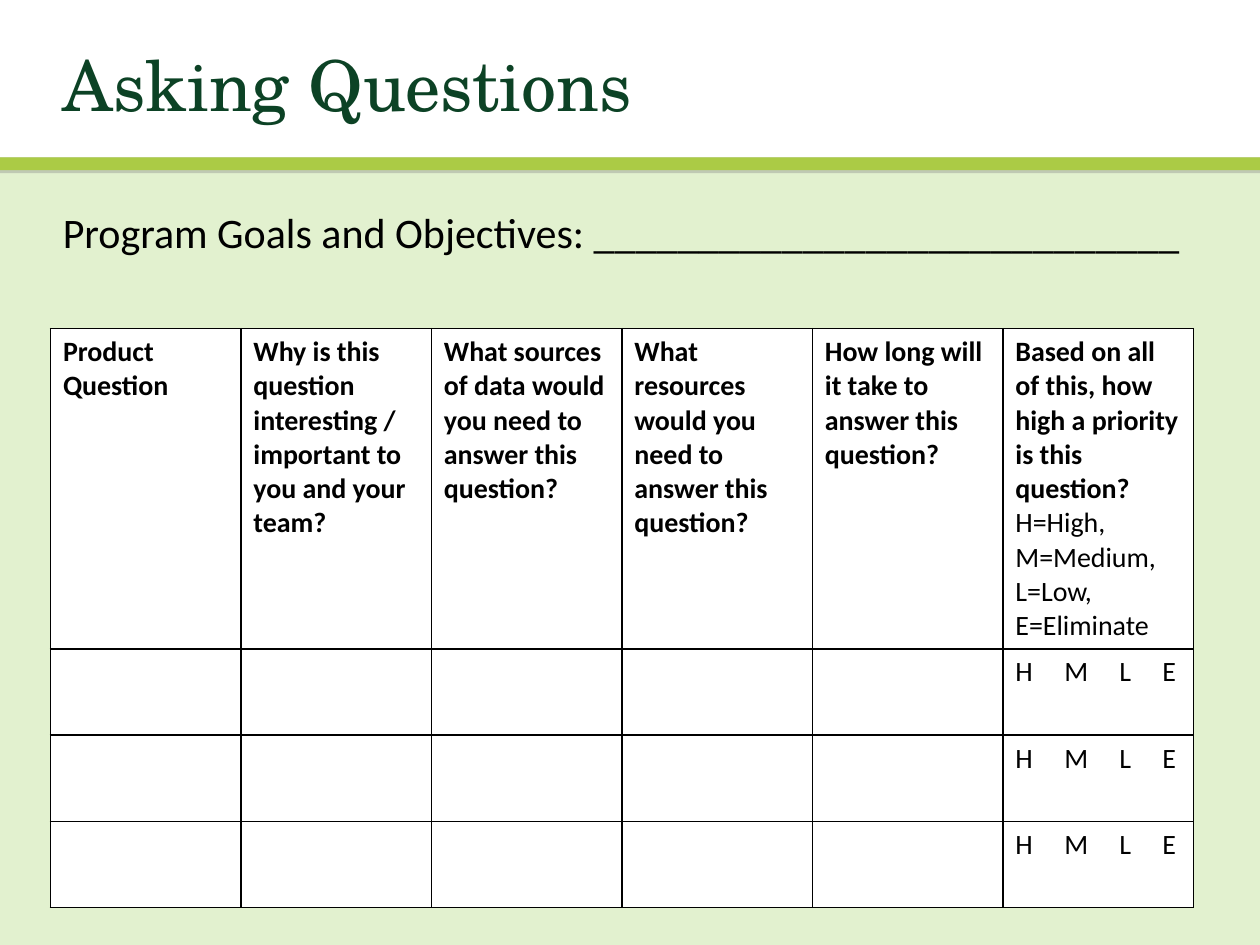
from lxml.etree import SubElement
from pptx import Presentation
from pptx.dml.color import RGBColor
from pptx.enum.shapes import MSO_SHAPE as Shape
from pptx.enum.text import MSO_ANCHOR as Anchor
from pptx.oxml.ns import qn
from pptx.util import Pt

COLORS = {
    "background": "E2F1CF",
    "white": "FFFFFF",
    "accent": "ABCB45",
    "title": "0C4225",
    "text": "000000",
    "shadow": "808080",
}
HEADINGS = [
    "Product Question",
    "Why is this question interesting / important to you and your team?",
    "What sources of data would you need to answer this question?",
    "What resources would you need to answer this question?",
    "How long will it take to answer this question?",
    "Based on all of this, how high a priority is this question?",
]
PRIORITY_KEY = "H=High, M=Medium, L=Low, E=Eliminate"
PRIORITY_CHOICES = "H\tM\tL\tE"
CHOICE_STOPS = (28, 59.4, 84)
QUESTION_ROWS = 3
LEFT, WIDTH = 28.8, 653.2


def rgb(name):
    return RGBColor.from_string(COLORS[name])


def add_solid_fill(parent, color):
    fill = SubElement(parent, qn("a:solidFill"))
    return SubElement(fill, qn("a:srgbClr"), val=COLORS[color])


class SlideBuilder:
    body_font = "Calibri"
    title_font = "TeX Gyre Schola"

    def __init__(self, slide):
        self.slide = slide
        fill = slide.background.fill
        fill.solid()
        fill.fore_color.rgb = rgb("background")

    def style(self, paragraph, size, color="text", face=None, bold=False):
        font = paragraph.font
        font.name = face or self.body_font
        font.size = Pt(size)
        font.bold = bold
        font.color.rgb = rgb(color)

    def band(self, top, height, color):
        """Add a full-width bar with a thin shadow along its lower edge."""
        bar = self.slide.shapes.add_shape(
            Shape.RECTANGLE, 0, Pt(top), Pt(720), Pt(height))
        bar.fill.solid()
        bar.fill.fore_color.rgb = rgb(color)
        bar.line.fill.background()
        bar.shadow.inherit = False
        effects = bar.element.spPr.find(qn("a:effectLst"))
        shadow = SubElement(effects, qn("a:outerShdw"), blurRad="0",
                            dist=str(Pt(1.8)), dir="5400000", rotWithShape="0")
        shade = SubElement(shadow, qn("a:srgbClr"), val=COLORS["shadow"])
        SubElement(shade, qn("a:alpha"), val="35000")

    def text(self, words, top, width, height, size, anchor=Anchor.TOP,
             spacing=1.0, **style):
        box = self.slide.shapes.add_textbox(
            Pt(LEFT), Pt(top), Pt(width), Pt(height))
        frame = box.text_frame
        frame.word_wrap = True
        frame.vertical_anchor = anchor
        paragraph = frame.paragraphs[0]
        paragraph.text = words
        paragraph.line_spacing = spacing
        self.style(paragraph, size, **style)

    def cell(self, cell, words="", bold=False):
        properties = cell._tc.get_or_add_tcPr()
        for side in ("lnL", "lnR", "lnT", "lnB"):
            border = SubElement(properties, qn(f"a:{side}"), w=str(Pt(1)))
            add_solid_fill(border, "text")
        cell.fill.solid()
        cell.fill.fore_color.rgb = rgb("white")
        paragraph = cell.text_frame.paragraphs[0]
        paragraph.text = words
        self.style(paragraph, 16, bold=bold)

    def tab_stops(self, paragraph, positions):
        stops = SubElement(paragraph._p.get_or_add_pPr(), qn("a:tabLst"))
        # Tab stops must precede the default run properties.
        stops.getparent().insert(0, stops)
        for position in positions:
            SubElement(stops, qn("a:tab"), pos=str(Pt(position)), algn="l")

    def question_table(self, top, header_height, row_height):
        height = header_height + QUESTION_ROWS * row_height
        table = self.slide.shapes.add_table(
            QUESTION_ROWS + 1, len(HEADINGS),
            Pt(LEFT), Pt(top), Pt(WIDTH), Pt(height)).table
        table.first_row = table.horz_banding = False
        for column in table.columns:
            column.width = Pt(WIDTH / len(HEADINGS))
        for row in table.rows:
            row.height = Pt(row_height)
        table.rows[0].height = Pt(header_height)

        for column, heading in enumerate(HEADINGS):
            self.cell(table.cell(0, column), heading, bold=True)
            for row in range(1, QUESTION_ROWS + 1):
                self.cell(table.cell(row, column))

        last = len(HEADINGS) - 1
        key = table.cell(0, last).text_frame.add_paragraph()
        key.text = PRIORITY_KEY
        self.style(key, 16)
        for row in range(1, QUESTION_ROWS + 1):
            choices = table.cell(row, last).text_frame.paragraphs[0]
            choices.text = PRIORITY_CHOICES
            self.tab_stops(choices, CHOICE_STOPS)


def main():
    deck = Presentation()
    deck.slide_width, deck.slide_height = Pt(720), Pt(540)
    builder = SlideBuilder(deck.slides.add_slide(deck.slide_layouts[6]))

    builder.band(0, 90, "white")
    builder.band(90, 7.2, "accent")
    builder.text("Asking Questions", 21.6, WIDTH, 58.3, 40, Anchor.MIDDLE, 0.9,
                 color="title", face=builder.title_font)
    builder.question_table(187.8, 183, 49.3)
    builder.text("Program Goals and Objectives: " + "_" * 28,
                 114.5, 660.2, 36, 24)
    deck.save("out.pptx")


if __name__ == "__main__":
    main()
